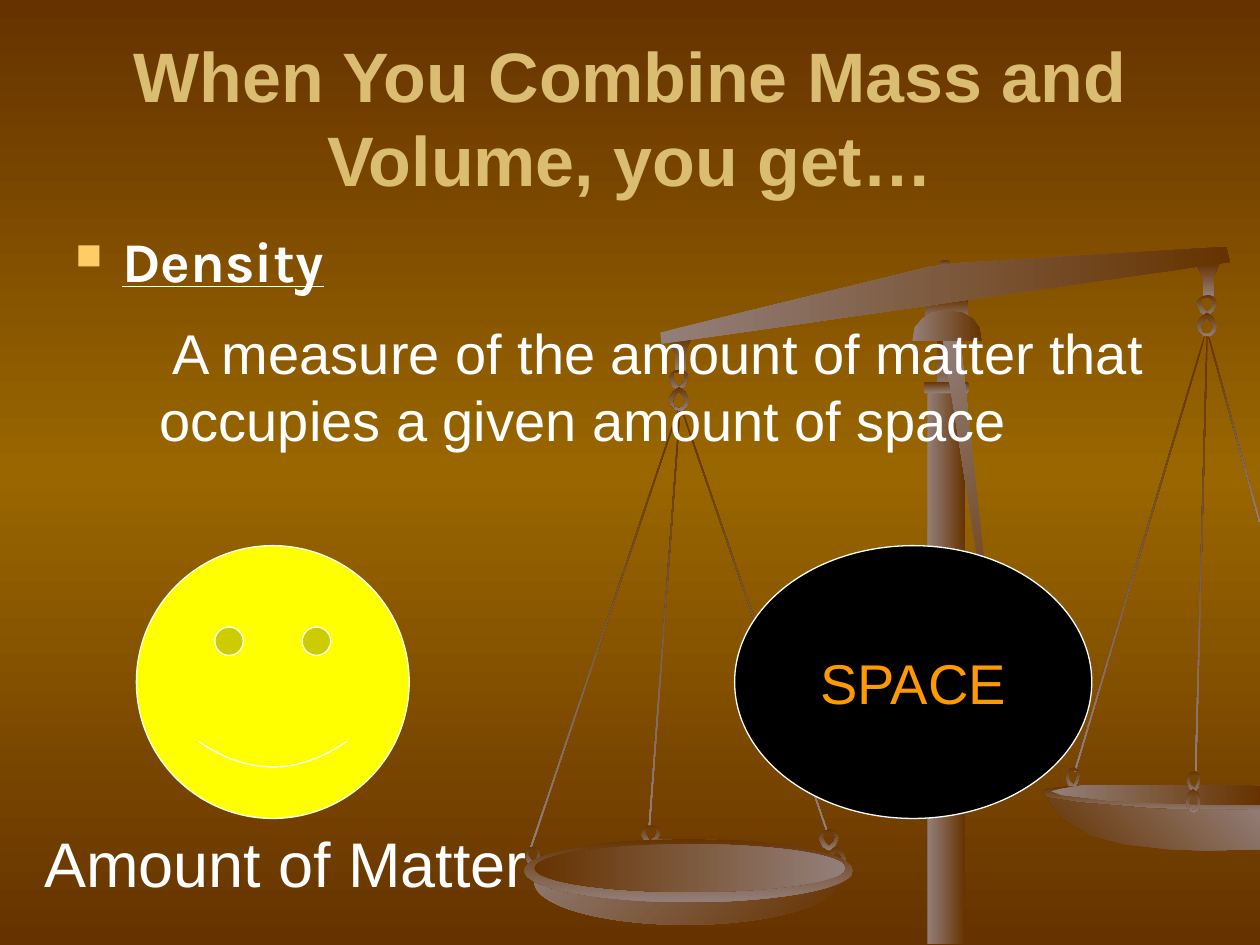
from copy import deepcopy

from lxml.etree import SubElement
from pptx import Presentation
from pptx.dml.color import RGBColor
from pptx.enum.shapes import MSO_SHAPE as SHAPE
from pptx.enum.text import MSO_ANCHOR as ANCHOR, PP_ALIGN as ALIGN
from pptx.oxml.ns import qn
from pptx.util import Cm, Pt

WIDTH, HEIGHT = 25.4, 19.05
BROWN, OCHRE, WHITE = "663300", "996600", "FFFFFF"
UNITS = 1000  # the balance is drawn on a grid this many units wide

# Outlines of the balance, in grid units
COLLAR = [(697, 528), (724, 531), (757, 530), (802, 524), (804, 544),
          (768, 551), (733, 552), (714, 551), (696, 547)]
RIGHT_RIM = [(958, 624), (897, 624), (846, 624), (831, 626), (827, 628),
             (832, 633), (852, 638), (894, 642), (935, 644), (1000, 645),
             (1000, 626)]
RIGHT_BOWL = [(831, 633), (842, 649), (865, 663), (892, 670), (928, 674),
              (957, 675), (1000, 674), (1000, 643), (918, 642), (857, 637)]
RIGHT_DISH = [(956, 623), (862, 623), (843, 626), (834, 628), (843, 631),
              (878, 635), (933, 638), (1000, 639), (1000, 624)]
HOOK = [(18, 0), (0, 2), (5, 12), (5, 26), (13, 26), (13, 11)]
BEAM = [(973, 196), (976, 208), (525, 273), (524, 264), (737, 212), (759, 209)]
POINTER = [(791, 539), (750, 280), (748, 268), (760, 265), (763, 277)]
DOME = [(752, 247), (763, 248), (772, 253), (777, 260), (779, 271),
        (724, 271), (726, 260), (732, 253), (740, 248)]

# Chain link hanging to a point, as fractions of its box
LINK_OUTER = [(.5, 1), (.8, .77), (1, .42), (.9, .15), (.6, 0),
              (.3, .03), (.05, .25), (0, .5), (.2, .8)]
LINK_INNER = [(.5, .8), (.75, .58), (.83, .35), (.7, .15), (.5, .12),
              (.25, .18), (.17, .4), (.3, .65)]


def color(hex_code):
    return RGBColor.from_string(hex_code)


def add_text(slide, box, text, size, hex_code, wrap=True):
    s = slide.shapes.add_textbox(*map(Cm, box))
    return write(s, text, size, hex_code, wrap)


def write(s, text, size, hex_code, wrap):
    tf = s.text_frame
    tf.word_wrap = wrap
    tf.text = text
    p = tf.paragraphs[0]
    font = p.runs[0].font
    font.name, font.size = "Arial", Pt(size)
    font.color.rgb = color(hex_code)
    return tf, p, font


def add_figure(slide, kind, box, fill):
    s = slide.shapes.add_shape(kind, *map(Cm, box))
    s.shadow.inherit = False
    s.fill.solid()
    s.fill.fore_color.rgb = color(fill)
    s.line.color.rgb = color(WHITE)
    s.line.width = Pt(0.75)
    return s


def shade(s, angle, light_first):
    """Brown gradient whose light end is a tint of the same brown."""
    s.shadow.inherit = False
    s.line.fill.background()
    s.fill.gradient()
    s.fill.gradient_angle = -angle % 360
    for i, stop in enumerate(s.fill.gradient_stops):
        stop.position = i
        stop.color.rgb = color(BROWN)
    stops = s._element.spPr.findall(".//" + qn("a:gs"))
    light = stops[0 if light_first else 1]
    SubElement(light[0], qn("a:tint")).set("val", "81570")


def paint_background(slide):
    fill = slide.background.fill
    fill.gradient()
    fill.gradient_angle = 270
    gs_list = slide._element.find(".//" + qn("a:gsLst"))
    gs_list.append(deepcopy(gs_list[0]))
    for stop, pos, code in zip(fill.gradient_stops, (0, .5, 1),
                               (BROWN, OCHRE, BROWN)):
        stop.position = pos
        stop.color.rgb = color(code)


def draw_balance(slide, box):
    left, top, width, _ = box
    x0, y0, unit = Cm(left), Cm(top), Cm(width) / UNITS

    def solid(kind, x, y, w, h, angle=90, light_first=False, rotation=0):
        s = slide.shapes.add_shape(
            kind, int(x0 + x * unit), int(y0 + y * unit),
            int(w * unit), int(h * unit))
        s.rotation = rotation
        shade(s, angle, light_first)

    def outline(*contours, at=(0, 0), angle=90, light_first=False):
        start = contours[0][0]
        fb = slide.shapes.build_freeform(*start, scale=unit)
        fb.add_line_segments(contours[0][1:], close=True)
        for points in contours[1:]:
            fb.move_to(*points[0])
            fb.add_line_segments(points[1:], close=True)
        s = fb.convert_to_shape(int(x0 + at[0] * unit), int(y0 + at[1] * unit))
        shade(s, angle, light_first)

    def link(x, y, w, h, upward=False):
        outline(*[[(x + fx * w, y + (1 - fy if upward else fy) * h)
                   for fx, fy in points]
                  for points in (LINK_OUTER, LINK_INNER)])

    # Pivot and cords
    solid(SHAPE.RECTANGLE, 734, 237, 34, 18)
    solid(SHAPE.OVAL, 746, 206, 8, 8)
    for x, y, length, rotation in [
            (904, 260, 360, 16.6), (953, 266, 347, 1.5), (979, 264, 153, 344.6),
            (598, 315, 353, 341), (479, 316, 368, 18.6), (527, 325, 331, 4.2)]:
        solid(SHAPE.RECTANGLE, x, y, 1, length, rotation=rotation)
    link(846, 609, 11, 17)
    outline(COLLAR)

    # Right pan
    outline(RIGHT_RIM)
    outline(RIGHT_BOWL, angle=315)
    outline(RIGHT_DISH, angle=0, light_first=True)
    link(942, 612, 11, 17)
    link(941, 626, 12, 19, upward=True)

    # A hook and two links at each end of the beam
    for x, y in [(531, 268), (950, 209)]:
        outline(HOOK, at=(x, y))
        link(x, y + 25, 16, 17)
        link(x, y + 39, 16, 19, upward=True)
    outline(BEAM, angle=0, light_first=True)

    # Left pan
    link(509, 655, 15, 16)
    link(656, 672, 16, 19, upward=True)
    link(417, 672, 12, 16)
    solid(SHAPE.OVAL, 424, 666, 240, 68, 45, light_first=True)
    solid(SHAPE.OVAL, 416, 666, 261, 50)
    solid(SHAPE.OVAL, 424, 670, 247, 38, 0)
    link(650, 658, 16, 17)

    # Post
    solid(SHAPE.RECTANGLE, 736, 308, 30, 441, 0, light_first=True)
    solid(SHAPE.RECTANGLE, 744, 268, 13, 42)
    solid(SHAPE.ROUNDED_RECTANGLE, 733, 303, 36, 9)
    outline(POINTER, angle=45, light_first=True)
    outline(DOME, angle=0, light_first=True)


def add_title(slide, box):
    tf, p, font = add_text(
        slide, box, "When You Combine Mass and Volume, you get…", 40, "DBBD71")
    tf.vertical_anchor = ANCHOR.MIDDLE
    p.alignment = ALIGN.CENTER
    font.bold = True


def add_definition(slide, box):
    left, top, width, _ = box
    # Bulleted term
    _, p, font = add_text(slide, (left, top, 6.35, 1.9), "Density", 32, WHITE)
    font.name, font.bold, font.underline = "Karla", True, True
    p.space_before = Pt(6.4)
    pPr = p._p.get_or_add_pPr()
    pPr.set("marL", str(Cm(0.95)))
    pPr.set("indent", str(-Cm(0.95)))
    SubElement(SubElement(pPr, qn("a:buClr")), qn("a:srgbClr")).set("val", "FFCC66")
    SubElement(pPr, qn("a:buSzPct")).set("val", "65000")
    SubElement(pPr, qn("a:buChar")).set("char", "■")
    # Meaning
    add_text(slide, (left + 1.7, top + 1.85, width - 1.7, 2.97),
             " A measure of the amount of matter that occupies a given"
             " amount of space", 32, WHITE)


def add_comparison(slide, box):
    left, top, width, _ = box
    size = 5.5
    # Space
    s = add_figure(slide, SHAPE.OVAL, (left + width - 7.2, top, 7.2, size), "000000")
    tf, p, _ = write(s, "SPACE", 32, "FF9900", wrap=False)
    tf.vertical_anchor = ANCHOR.MIDDLE
    p.alignment = ALIGN.CENTER
    # Matter
    add_figure(slide, SHAPE.SMILEY_FACE, (left + 2.11, top, size, size), "FFFF00")
    add_text(slide, (left, top + size, 10.24, 1.78), "Amount of Matter", 36,
             WHITE, wrap=False)


def main():
    prs = Presentation()
    prs.slide_width, prs.slide_height = Cm(WIDTH), Cm(HEIGHT)
    slide = prs.slides.add_slide(prs.slide_layouts[6])
    paint_background(slide)
    draw_balance(slide, (0, 0, WIDTH, HEIGHT))
    add_title(slide, (1.27, 0.76, 22.86, 3.18))
    add_definition(slide, (1.27, 4.45, 23.29, 4.82))
    add_comparison(slide, (0.64, 11, 21.37, 7.28))
    prs.save("out.pptx")


if __name__ == "__main__":
    main()
